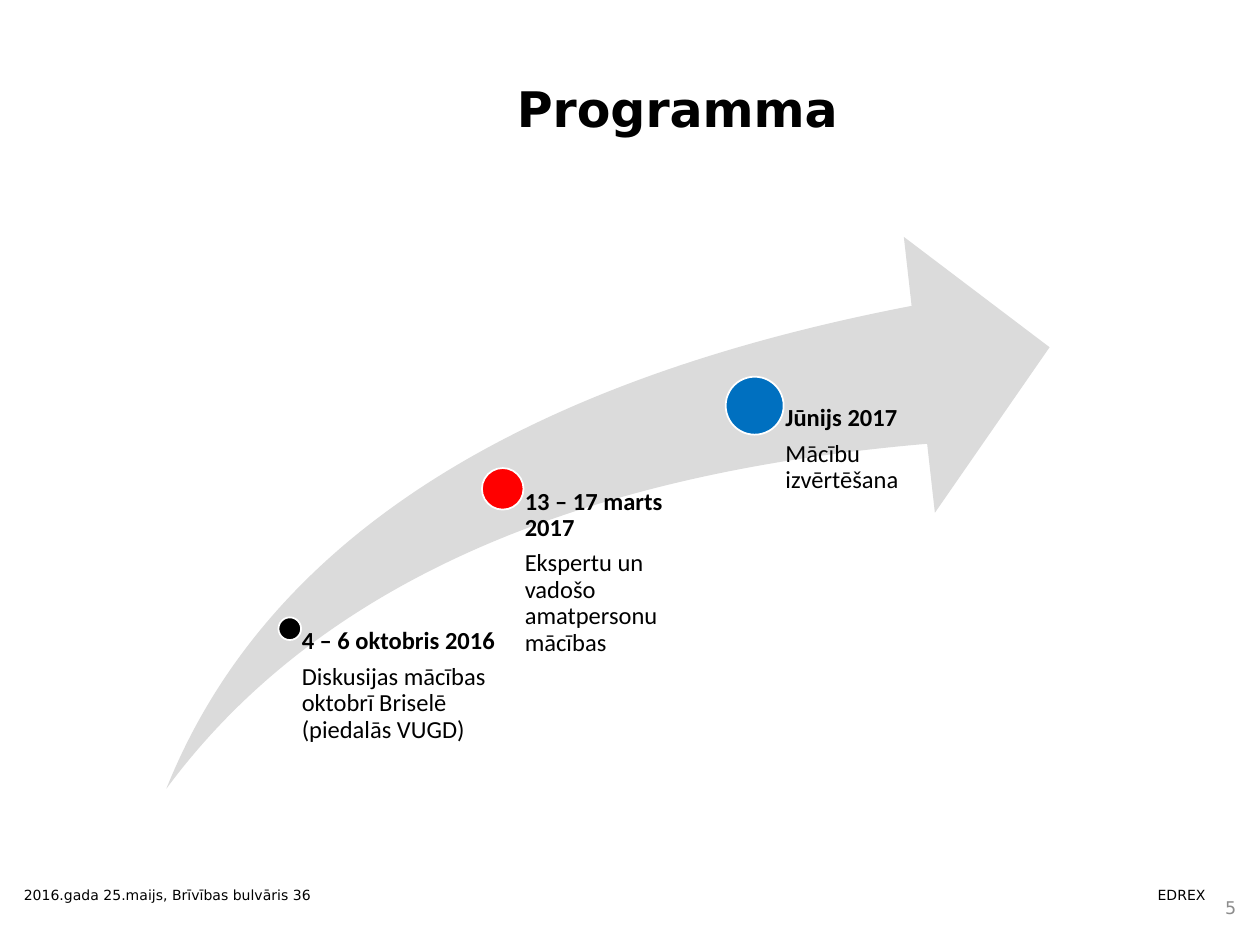
"""Build the programme slide: three milestones along a rising arrow."""
from lxml import etree
from pptx import Presentation
from pptx import util as u
from pptx.dml.color import RGBColor
from pptx.enum import shapes, text
from pptx.oxml import ns

BLACK = RGBColor(0, 0, 0)
WHITE = RGBColor(255, 255, 255)
SWOOSH = RGBColor(0xDB, 0xDB, 0xDB)
GREY = RGBColor(0x8C, 0x8C, 0x8C)
RED = RGBColor(255, 0, 0)
BLUE = RGBColor(0, 0x70, 0xC0)
SANS, BODY = "DejaVu Sans", "Calibri"

TITLE = "Programma"
FOOT = "2016.gada 25.maijs, Brīvības bulvāris 36\tEDREX"
PAGE = "5"
ARROW = (1.32, 1.88, 7.01, 4.38)
STEPS = [
    (2.3, 4.99, 0.18, 1.63, BLACK, "4 – 6 oktobris 2016",
     "Diskusijas mācības oktobrī Briselē (piedalās VUGD)"),
    (3.99, 3.88, 0.33, 1.68, RED, "13 – 17 marts 2017",
     "Ekspertu un vadošo amatpersonu mācības"),
    (5.99, 3.22, 0.46, 1.68, BLUE, "Jūnijs 2017", "Mācību izvērtēšana"),
]


def style(para, size, face, color, bold=False):
    font = para.font
    font.size, font.name, font.bold = u.Pt(size), face, bold
    font.color.rgb = color


def place(box):
    return [u.Inches(n) for n in box]


def add_box(slide, box):
    frame = slide.shapes.add_textbox(*place(box)).text_frame
    frame.word_wrap = True
    return frame


def add_form(slide, kind, box, color):
    form = slide.shapes.add_shape(kind, *place(box))
    form.shadow.inherit = False
    form.fill.solid()
    form.fill.fore_color.rgb = color
    form.line.fill.background()
    return form


def add_title(slide):
    title = slide.shapes.title
    title.left, title.top, title.width, title.height = place((2.6, 0.4, 5.55, 0.97))
    frame = title.text_frame
    frame.text = TITLE
    frame.vertical_anchor = text.MSO_ANCHOR.MIDDLE
    para = frame.paragraphs[0]
    para.alignment = text.PP_ALIGN.CENTER
    para.line_spacing = 0.9
    style(para, 28, SANS, BLACK, True)


def add_foot(slide):
    frame = add_box(slide, (7.09, 7.07, 2.82, 0.27))
    frame.vertical_anchor = text.MSO_ANCHOR.MIDDLE
    para = frame.paragraphs[0]
    para.text = PAGE
    para.alignment = text.PP_ALIGN.RIGHT
    style(para, 10, SANS, GREY)

    para = add_box(slide, (0.09, 7.02, 9.59, 0.29)).paragraphs[0]
    para.text = FOOT
    para.line_spacing = 0.7
    tabs = etree.SubElement(para._p.get_or_add_pPr(), ns.qn("a:tabLst"))
    etree.SubElement(tabs, ns.qn("a:tab"), pos=str(u.Inches(9.38)), algn="r")
    style(para, 8, SANS, BLACK)


def add_step(slide, x, y, size, width, color, date, event):
    dot = add_form(slide, shapes.MSO_SHAPE.OVAL,
                   (x - size / 2, y - size / 2, size, size), color)
    dot.line.color.rgb = WHITE
    dot.line.width = u.Pt(1)

    base = ARROW[1] + ARROW[3]
    frame = add_box(slide, (x, y, width, base - y))
    frame.margin_left = u.Inches(size * 0.53)
    frame.margin_top = frame.margin_right = frame.margin_bottom = 0
    frame.text = f"{date}\n{event}"
    for para, bold in zip(frame.paragraphs, (True, False)):
        para.line_spacing = 0.9
        para.space_after = u.Pt(5)
        style(para, 14, BODY, BLACK, bold)


def main():
    deck = Presentation()
    deck.slide_width, deck.slide_height = u.Inches(10), u.Inches(7.5)
    slide = deck.slides.add_slide(deck.slide_layouts[5])
    add_title(slide)
    add_foot(slide)
    arrow = add_form(slide, shapes.MSO_SHAPE.SWOOSH_ARROW, ARROW, SWOOSH)
    arrow.adjustments[0] = arrow.adjustments[1] = 0.25
    for step in STEPS:
        add_step(slide, *step)
    deck.save("out.pptx")


if __name__ == "__main__":
    main()
